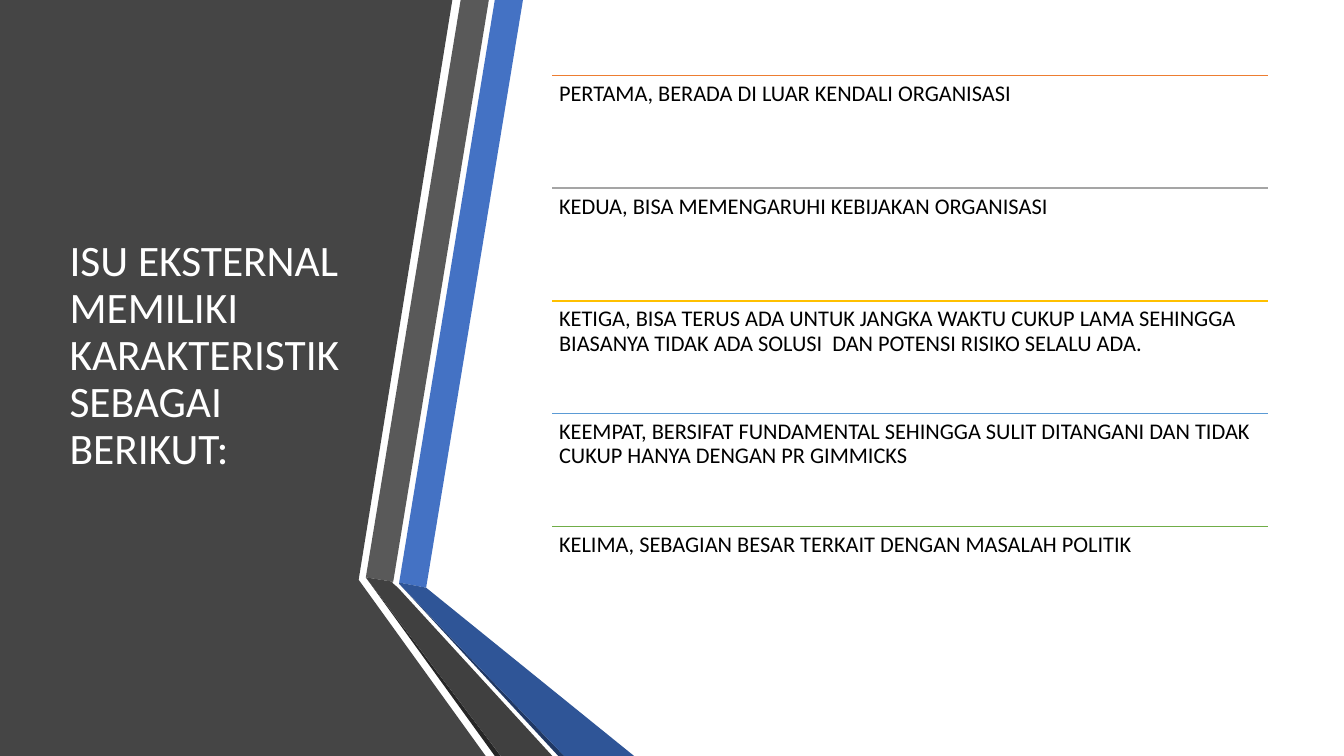
from lxml.etree import SubElement
from pptx import Presentation
from pptx.dml.color import RGBColor
from pptx.enum.shapes import MSO_CONNECTOR
from pptx.enum.text import MSO_ANCHOR, MSO_AUTO_SIZE, PP_ALIGN
from pptx.oxml.ns import qn
from pptx.util import Cm, Pt

WHITE = RGBColor(0xFF, 0xFF, 0xFF)
BLACK = RGBColor(0x00, 0x00, 0x00)
PANEL_GRAY = RGBColor(0x45, 0x45, 0x45)
BLUE = RGBColor(0x44, 0x72, 0xC4)
DEEP_BLUE = RGBColor(0x2F, 0x55, 0x97)
NAVY = RGBColor(0x20, 0x38, 0x64)
GRAY = RGBColor(0x59, 0x59, 0x59)
DARK_GRAY = RGBColor(0x40, 0x40, 0x40)
CHARCOAL = RGBColor(0x26, 0x26, 0x26)
ORANGE = RGBColor(0xED, 0x7D, 0x31)
SILVER = RGBColor(0xA5, 0xA5, 0xA5)
GOLD = RGBColor(0xFF, 0xC0, 0x00)
SKY = RGBColor(0x5B, 0x9B, 0xD5)
GREEN = RGBColor(0x70, 0xAD, 0x47)

SLIDE_WIDTH, SLIDE_HEIGHT = 33.87, 19.05
BOTTOM = SLIDE_HEIGHT

# Fill and corner points in centimetres, from back to front.
RIBBONS = [
    (PANEL_GRAY, [(0, 0), (11.4, 0), (9.04, 14.61), (12.24, BOTTOM), (0, BOTTOM)]),
    (BLUE, [(10.06, 14.68), (10.74, 14.81), (13.18, 0), (12.47, 0)]),
    (GRAY, [(12.32, 0), (11.61, 0), (9.22, 14.55), (9.91, 14.66)]),
    (CHARCOAL, [(9.22, 14.55), (12.47, BOTTOM), (12.62, BOTTOM)]),
    (NAVY, [(10.06, 14.71), (14.07, BOTTOM), (14.22, BOTTOM)]),
    (DEEP_BLUE, [(10.06, 14.71), (14.22, BOTTOM), (15.98, BOTTOM),
                 (10.74, 14.81), (10.06, 14.68)]),
    (DARK_GRAY, [(13.92, BOTTOM), (10.03, 14.81), (9.88, 14.68), (9.91, 14.66),
                 (9.22, 14.55), (12.62, BOTTOM)]),
]

TITLE = "ISU EKSTERNAL MEMILIKI\vKARAKTERISTIK SEBAGAI BERIKUT:"

CHARACTERISTICS = [
    (ORANGE, "PERTAMA, BERADA DI LUAR KENDALI ORGANISASI"),
    (SILVER, "KEDUA, BISA MEMENGARUHI KEBIJAKAN ORGANISASI"),
    (GOLD, "KETIGA, BISA TERUS ADA UNTUK JANGKA WAKTU CUKUP LAMA SEHINGGA "
           "BIASANYA TIDAK ADA SOLUSI  DAN POTENSI RISIKO SELALU ADA."),
    (SKY, "KEEMPAT, BERSIFAT FUNDAMENTAL SEHINGGA SULIT DITANGANI DAN TIDAK "
          "CUKUP HANYA DENGAN PR GIMMICKS"),
    (GREEN, "KELIMA, SEBAGIAN BESAR TERKAIT DENGAN MASALAH POLITIK"),
]
LIST_LEFT, LIST_TOP, LIST_WIDTH, ROW_HEIGHT = 13.92, 1.9, 18.03, 2.84


class SlideBuilder:
    font_name = "Calibri"
    title_size = Pt(31)
    body_size = Pt(16)
    line_spacing = 0.9
    rule_width = Pt(1)
    text_inset = Cm(0.17)

    def __init__(self, slide):
        self.slide = slide

    def fill_text(self, text_frame, text, size, color):
        text_frame.text = text
        text_frame.word_wrap = True
        text_frame.auto_size = MSO_AUTO_SIZE.NONE
        for paragraph in text_frame.paragraphs:
            paragraph.alignment = PP_ALIGN.LEFT
            paragraph.line_spacing = self.line_spacing
            for run in paragraph.runs:
                run.font.name = self.font_name
                run.font.size = size
                run.font.color.rgb = color

    def add_title(self, text, left, top, width, height):
        title = self.slide.shapes.title
        title.left, title.top = Cm(left), Cm(top)
        title.width, title.height = Cm(width), Cm(height)
        title.text_frame.vertical_anchor = MSO_ANCHOR.MIDDLE
        self.fill_text(title.text_frame, text, self.title_size, WHITE)

    def add_polygon(self, color, points):
        first, *others = [(Cm(x), Cm(y)) for x, y in points]
        builder = self.slide.shapes.build_freeform(*first)
        builder.add_line_segments(others, close=True)
        shape = builder.convert_to_shape()
        shape.shadow.inherit = False
        shape.fill.solid()
        shape.fill.fore_color.rgb = color
        shape.line.fill.background()

    def add_rule(self, color, left, top, width):
        rule = self.slide.shapes.add_connector(
            MSO_CONNECTOR.STRAIGHT, Cm(left), Cm(top), Cm(left + width), Cm(top))
        rule.line.color.rgb = color
        rule.line.width = self.rule_width
        SubElement(rule._element.spPr, qn("a:effectLst"))

    def add_text(self, text, left, top, width, height):
        box = self.slide.shapes.add_textbox(Cm(left), Cm(top), Cm(width), Cm(height))
        frame = box.text_frame
        frame.margin_left = frame.margin_right = self.text_inset
        frame.margin_top = frame.margin_bottom = self.text_inset
        self.fill_text(frame, text, self.body_size, BLACK)


def main():
    presentation = Presentation()
    presentation.slide_width = Cm(SLIDE_WIDTH)
    presentation.slide_height = Cm(SLIDE_HEIGHT)
    title_only = presentation.slide_layouts.get_by_name("Title Only")
    slide = presentation.slides.add_slide(title_only)
    builder = SlideBuilder(slide)

    for color, points in RIBBONS:
        builder.add_polygon(color, points)
    # The title placeholder comes first in the tree; bring it above the panel.
    slide.shapes._spTree.append(slide.shapes.title._element)
    builder.add_title(TITLE, 1.5, 1.9, 7.72, 14.17)

    for index, (color, text) in enumerate(CHARACTERISTICS):
        top = LIST_TOP + index * ROW_HEIGHT
        builder.add_rule(color, LIST_LEFT, top, LIST_WIDTH)
        builder.add_text(text, LIST_LEFT, top, LIST_WIDTH, ROW_HEIGHT)

    presentation.save("out.pptx")


if __name__ == "__main__":
    main()
